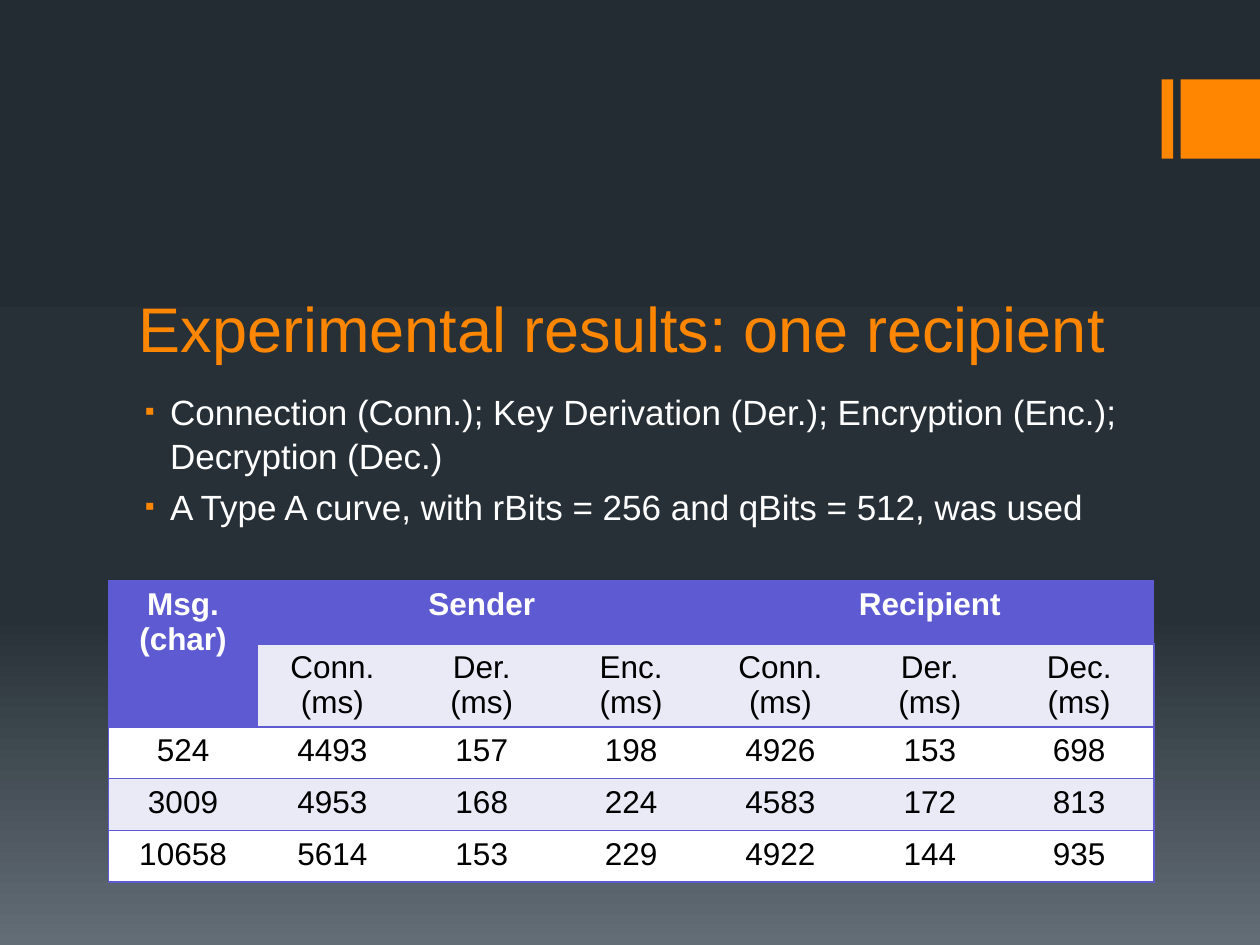
from dataclasses import dataclass
from pptx import Presentation
from pptx import oxml
from pptx import util as u
from pptx.dml.color import RGBColor
from pptx.enum import shapes, text
from pptx.oxml import ns


@dataclass(frozen=True)
class Theme:
    font: str = "Arial"
    accent: str = "FF8600"
    head: str = "5D5AD2"
    band: str = "EAEAF7"
    light: str = "FFFFFF"
    dark: str = "000000"
    stops: tuple = ((0, "242C33"), (65, "273037"), (100, "636D76"))
    title: int = 36
    body: int = 20
    cell: int = 18


def node(tag, attrs="", inner=""):
    return oxml.parse_xml(f"<a:{tag} {ns.nsdecls('a')} {attrs}>{inner}</a:{tag}>")


def solid(color):
    return f'<a:solidFill><a:srgbClr val="{color}"/></a:solidFill>'


def apply(item, props):
    for name, value in props.items():
        setattr(item, name, value)


class Deck:
    def __init__(self, theme):
        self.theme = theme
        self.file = Presentation()
        apply(self.file, {"slide_width": u.Inches(10), "slide_height": u.Inches(7.5)})
        self.slide = self.file.slides.add_slide(self.file.slide_layouts[1])

    def back(self):
        fill = self.slide.background.fill
        fill.gradient()
        grad = self.slide.background._cSld.find(".//" + ns.qn("a:gradFill"))
        for child in list(grad):
            grad.remove(child)
        stops = "".join(
            f'<a:gs pos="{pos * 1000}"><a:srgbClr val="{color}"/></a:gs>'
            for pos, color in self.theme.stops
        )
        grad.append(node("gsLst", inner=stops))
        grad.append(node("lin", 'ang="5400000" scaled="0"'))

    def place(self, item, box):
        apply(item, dict(zip(("left", "top", "width", "height"), map(u.Inches, box))))

    def style(self, para, size, color, bold=False):
        for run in para.runs:
            apply(run.font, {"name": self.theme.font, "size": u.Pt(size), "bold": bold})
            run.font.color.rgb = RGBColor.from_string(color)

    def bar(self, box):
        bar = self.slide.shapes.add_shape(
            shapes.MSO_SHAPE.RECTANGLE, *map(u.Inches, box))
        bar.shadow.inherit = False
        bar.fill.solid()
        bar.fill.fore_color.rgb = RGBColor.from_string(self.theme.accent)
        bar.line.fill.background()

    def title(self, words, box):
        item = self.slide.shapes.title
        self.place(item, box)
        frame = item.text_frame
        frame.text = words
        apply(frame, {"word_wrap": True, "auto_size": text.MSO_AUTO_SIZE.NONE,
                      "vertical_anchor": text.MSO_ANCHOR.BOTTOM})
        para = frame.paragraphs[0]
        para.alignment = text.PP_ALIGN.LEFT
        self.style(para, self.theme.title, self.theme.accent)

    def bullets(self, lines, box):
        item = self.slide.placeholders[1]
        self.place(item, box)
        frame = item.text_frame
        frame.text = "\n".join(lines)
        apply(frame, {"word_wrap": True, "auto_size": text.MSO_AUTO_SIZE.NONE})
        for para in frame.paragraphs:
            apply(para, {"line_spacing": 1.05, "space_before": u.Pt(4)})
            self.style(para, self.theme.body, self.theme.light)
            props = para._p.get_or_add_pPr()
            apply_indent = {"marL": u.Inches(0.25), "indent": u.Inches(-0.2)}
            for name, value in apply_indent.items():
                props.set(name, str(int(value)))
            props.append(node("buClr", inner=f'<a:srgbClr val="{self.theme.accent}"/>'))
            props.append(node("buSzPct", 'val="80000"'))
            props.append(node("buFont", f'typeface="{self.theme.font}"'))
            props.append(node("buChar", 'char="▪"'))

    def cell(self, cell, words, fill, color, bold, sides):
        cell.fill.solid()
        cell.fill.fore_color.rgb = RGBColor.from_string(fill)
        props = cell._tc.get_or_add_tcPr()
        for index, side in enumerate(sides):
            props.insert(index, node(f"ln{side}", 'w="12700"', solid(self.theme.head)))
        cell.text_frame.text = words
        for para in cell.text_frame.paragraphs:
            para.alignment = text.PP_ALIGN.CENTER
            self.style(para, self.theme.cell, color, bold)

    def table(self, rows, heights, spans, box):
        wide = len(rows[0])
        frame = self.slide.shapes.add_table(len(rows), wide, *map(u.Inches, box))
        grid = frame.table
        grid._tbl.tblPr.find(ns.qn("a:tableStyleId")).text = (
            "{2D5ABB26-0587-4C30-8999-92F81FD0307C}")
        for col in grid.columns:
            col.width = u.Inches(box[2] / wide)
        for r, row in enumerate(rows):
            grid.rows[r].height = u.Inches(heights[r])
            for c, words in enumerate(row):
                head = r == 0 or (r == 1 and c == 0)
                plain = self.theme.band if r % 2 else self.theme.light
                sides = "L" * (c == 0) + "R" * (c == wide - 1) + "TB"
                self.cell(grid.cell(r, c), words,
                          self.theme.head if head else plain,
                          self.theme.light if head else self.theme.dark, head, sides)
        for start, end in spans:
            grid.cell(*start).merge(grid.cell(*end))

    def save(self):
        self.file.save("out.pptx")


def main():
    deck = Deck(Theme())
    deck.back()
    for left, width in ((9.22, 0.09), (9.37, 0.63)):
        deck.bar((left, 0.63, width, 0.63))
    deck.title("Experimental results: one recipient", (1, 1.69, 8, 1.26))
    deck.bullets((
        "Connection (Conn.); Key Derivation (Der.); Encryption (Enc.); Decryption (Dec.)",
        "A Type A curve, with rBits = 256 and qBits = 512, was used",
    ), (1, 3.03, 8, 3.87))
    steps = ("Conn.", "Der.", "Enc.", "Conn.", "Der.", "Dec.")
    rows = (
        ("Msg.\n(char)", "Sender", "", "", "Recipient", "", ""),
        ("", *(f"{step}\n(ms)" for step in steps)),
        ("524", "4493", "157", "198", "4926", "153", "698"),
        ("3009", "4953", "168", "224", "4583", "172", "813"),
        ("10658", "5614", "153", "229", "4922", "144", "935"),
    )
    spans = (((0, 0), (1, 0)), ((0, 1), (0, 3)), ((0, 4), (0, 6)))
    deck.table(rows, (0.5, 0.5, 0.41, 0.41, 0.41), spans, (0.86, 4.61, 8.3, 2.42))
    deck.save()


if __name__ == "__main__":
    main()
